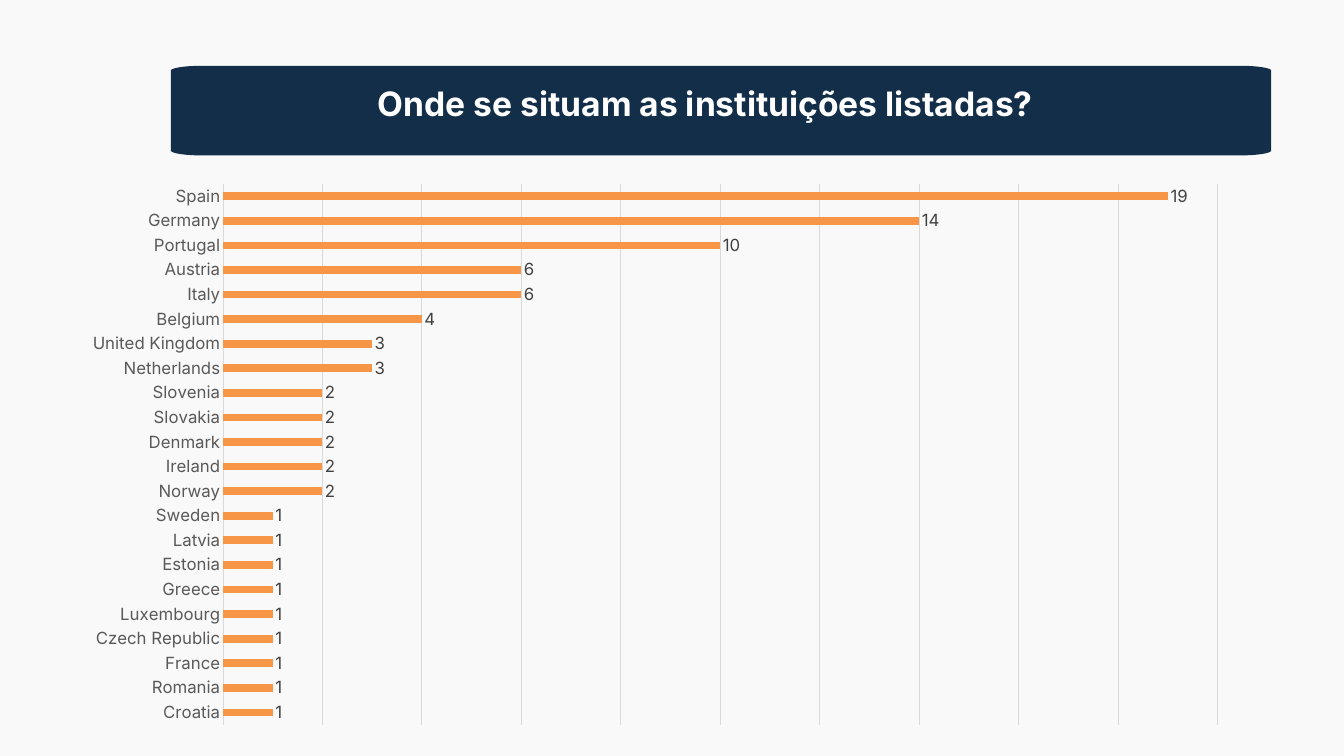
"""Builds a slide with a bar chart of listed institutions by country."""
from math import cos, pi, sin

from pptx import Presentation
from pptx.chart.data import CategoryChartData
from pptx.dml.color import RGBColor
from pptx.enum.chart import XL_CHART_TYPE as CT, XL_LABEL_POSITION as LP, XL_TICK_MARK as TM
from pptx.enum.text import MSO_ANCHOR as ANCHOR, MSO_AUTO_SIZE as FIT, PP_ALIGN as ALIGN
from pptx.oxml import parse_xml
from pptx.oxml.ns import nsdecls, qn
from pptx.util import Pt

TITLE = "Onde se situam as instituições listadas?"
COUNTS = [
    ("Spain", 19), ("Germany", 14), ("Portugal", 10), ("Austria", 6), ("Italy", 6),
    ("Belgium", 4), ("United Kingdom", 3), ("Netherlands", 3), ("Slovenia", 2),
    ("Slovakia", 2), ("Denmark", 2), ("Ireland", 2), ("Norway", 2), ("Sweden", 1),
    ("Latvia", 1), ("Estonia", 1), ("Greece", 1), ("Luxembourg", 1),
    ("Czech Republic", 1), ("France", 1), ("Romania", 1), ("Croatia", 1),
]
COLORS = {"page": "F9F9F9", "banner": "132E49", "title": "FFFFFF", "bar": "F79646",
          "grid": "D9D9D9", "category": "595959", "value": "404040", "text": "000000"}
FONT = "Inter"
PX = 9525
SLIDE = (1920, 1080)
BANNER = (244, 94, 1572, 128)
CORNER = (44, 7)
CORNER_STEPS = 12
TITLE_BOX = (272, 137, 1472, 41)
CHART_BOX = (96, 224, 1672, 846)
PLOT = {"x": 0.133, "y": 0.046, "w": 0.85, "h": 0.913}


def emu(box):
    return [v * PX for v in box]


def rgb(name):
    return RGBColor.from_string(COLORS[name])


def set_all(obj, values):
    for name, value in values.items():
        setattr(obj, name, value)


def style_font(font, color, size=18, bold=False):
    set_all(font, {"name": FONT, "size": Pt(size), "bold": bold})
    font.color.rgb = rgb(color)


def style_line(line):
    line.color.rgb = rgb("grid")
    line.width = Pt(0.75)


def add_banner(slide):
    x, y, w, h = BANNER
    rx, ry = CORNER
    centers = [(x + w - rx, y + h - ry), (x + rx, y + h - ry),
               (x + rx, y + ry), (x + w - rx, y + ry)]
    points = []
    for quarter, (cx, cy) in enumerate(centers):
        for step in range(CORNER_STEPS + 1):
            angle = (quarter + step / CORNER_STEPS) * pi / 2
            points.append((round((cx + rx * cos(angle)) * PX),
                           round((cy + ry * sin(angle)) * PX)))
    builder = slide.shapes.build_freeform(*points[0])
    builder.add_line_segments(points[1:], close=True)
    sp = builder.convert_to_shape()
    sp.shadow.inherit = False
    sp.fill.solid()
    sp.fill.fore_color.rgb = rgb("banner")
    sp.line.fill.background()


def add_title(slide):
    sp = slide.shapes.title
    set_all(sp, dict(zip(("left", "top", "width", "height"), emu(TITLE_BOX))))
    sp.element.getparent().append(sp.element)
    tf = sp.text_frame
    tf.text = TITLE
    set_all(tf, {"margin_left": 0, "margin_top": 0, "margin_right": 0, "margin_bottom": 0,
                 "word_wrap": True, "vertical_anchor": ANCHOR.TOP,
                 "auto_size": FIT.SHAPE_TO_FIT_TEXT})
    p = tf.paragraphs[0]
    set_all(p, {"alignment": ALIGN.CENTER, "line_spacing": Pt(29.4), "space_before": Pt(0)})
    style_font(p.runs[0].font, "title", 36, True)


def place_plot(chart):
    area = chart.element.find(".//" + qn("c:plotArea"))
    for old in area.findall(qn("c:layout")):
        area.remove(old)
    modes = "".join(f'<c:{k}Mode val="edge"/>' for k in "xy")
    sizes = "".join(f'<c:{k} val="{v}"/>' for k, v in PLOT.items())
    area.insert(0, parse_xml(
        f'<c:layout {nsdecls("c")}><c:manualLayout><c:layoutTarget val="inner"/>'
        f'{modes}{sizes}</c:manualLayout></c:layout>'))


def add_country_chart(slide):
    countries, counts = zip(*COUNTS)
    data = CategoryChartData()
    data.categories = countries
    data.add_series("Series 1", counts)
    chart = slide.shapes.add_chart(CT.BAR_CLUSTERED, *emu(CHART_BOX), data).chart
    set_all(chart, {"has_legend": False, "has_title": False})
    style_font(chart.font, "text")
    place_plot(chart)

    plot = chart.plots[0]
    set_all(plot, {"gap_width": 219, "vary_by_categories": False, "has_data_labels": True})
    fill = plot.series[0].format.fill
    fill.solid()
    fill.fore_color.rgb = rgb("bar")
    set_all(plot.data_labels, {"show_value": True, "position": LP.OUTSIDE_END})
    style_font(plot.data_labels.font, "value")

    axis = chart.category_axis
    set_all(axis, {"reverse_order": True, "major_tick_mark": TM.NONE,
                   "minor_tick_mark": TM.NONE, "has_major_gridlines": False})
    style_font(axis.tick_labels.font, "category")
    style_line(axis.format.line)

    axis = chart.value_axis
    set_all(axis, {"minimum_scale": 0, "maximum_scale": 20, "major_unit": 2,
                   "has_major_gridlines": True, "visible": False})
    style_line(axis.major_gridlines.format.line)


def main():
    prs = Presentation()
    prs.slide_width, prs.slide_height = emu(SLIDE)
    s = prs.slides.add_slide(prs.slide_layouts[5])
    s.background.fill.solid()
    s.background.fill.fore_color.rgb = rgb("page")
    add_country_chart(s)
    add_banner(s)
    add_title(s)
    prs.save("out.pptx")


if __name__ == "__main__":
    main()
